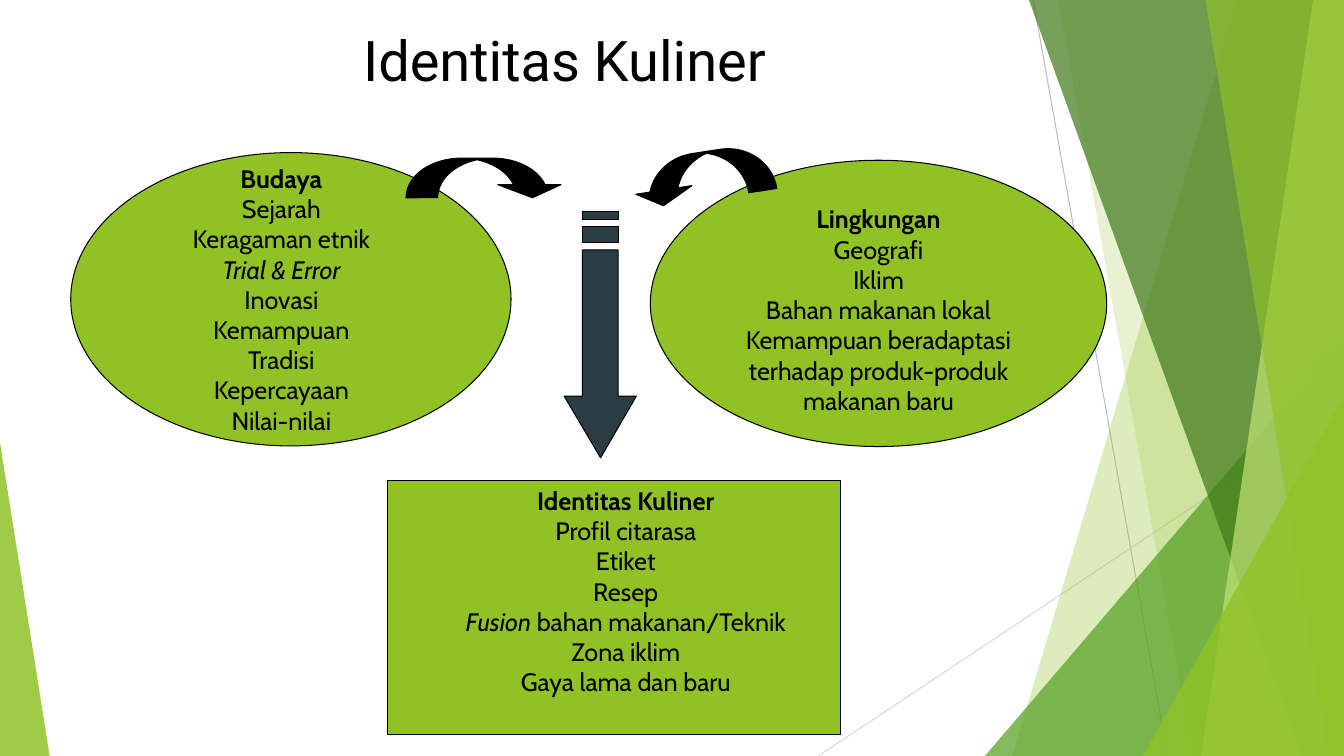
from lxml.etree import SubElement
from pptx import Presentation
from pptx.dml.color import RGBColor
from pptx.enum.shapes import MSO_CONNECTOR, MSO_SHAPE
from pptx.enum.text import PP_ALIGN
from pptx.oxml.ns import qn
from pptx.util import Pt

WIDTH, HEIGHT = 960, 540
BLACK = RGBColor(0x00, 0x00, 0x00)
LIME = RGBColor(0x90, 0xC2, 0x26)
GREEN = RGBColor(0x54, 0xA0, 0x21)
FOREST = RGBColor(0x3F, 0x78, 0x19)
PALE_LIME = RGBColor(0xC0, 0xE4, 0x74)
SLATE = RGBColor(0x2C, 0x3C, 0x43)
GREY = RGBColor(0xBF, 0xBF, 0xBF)
LIGHT_GREY = RGBColor(0xD9, 0xD9, 0xD9)


def style_shape(shape, color, outlined=True, opacity=100):
    """Fill a shape, with an optional black outline and transparency."""
    shape.shadow.inherit = False
    shape.fill.solid()
    shape.fill.fore_color.rgb = color
    if outlined:
        shape.line.color.rgb = BLACK
        shape.line.width = Pt(0.75)
    else:
        shape.line.fill.background()
    if opacity < 100:
        color_element = shape._element.spPr.find(qn("a:solidFill"))[0]
        SubElement(color_element, qn("a:alpha"), val=str(opacity * 1000))


def add_preset(slide, kind, box, color, adjustments=(), rotation=0, **style):
    """Add a preset shape in a box of left, top, width and height."""
    shape = slide.shapes.add_shape(kind, *map(Pt, box))
    for index, value in enumerate(adjustments):
        shape.adjustments[index] = value
    shape.rotation = rotation
    style_shape(shape, color, **style)


def add_outline(slide, contours, color, **style):
    """Add a freeform made of one or more closed contours."""
    points = [[(Pt(x), Pt(y)) for x, y in contour] for contour in contours]
    builder = slide.shapes.build_freeform(*points[0][0])
    builder.add_line_segments(points[0][1:])
    for contour in points[1:]:
        builder.move_to(*contour[0])
        builder.add_line_segments(contour[1:])
    style_shape(builder.convert_to_shape(), color, **style)


def add_band(slide, top_left, bottom_left, color, opacity):
    """Add a translucent band that reaches the right edge of the slide."""
    corners = [(top_left, 0), (WIDTH, 0), (WIDTH, HEIGHT), (bottom_left, HEIGHT)]
    add_outline(slide, [corners], color, outlined=False, opacity=opacity)


def add_corner(slide, left, top, width, apex, color, opacity):
    """Add a translucent triangle that stands on the bottom edge."""
    add_preset(slide, MSO_SHAPE.ISOSCELES_TRIANGLE, (left, top, width, HEIGHT - top),
               color, [apex], outlined=False, opacity=opacity)


def add_line(slide, ends, color):
    """Add a thin straight line between two points."""
    line = slide.shapes.add_connector(MSO_CONNECTOR.STRAIGHT, *map(Pt, ends))
    line.line.color.rgb = color
    line.line.width = Pt(0.75)
    SubElement(line._element.spPr, qn("a:effectLst"))


def add_text(slide, box, lines, size=18, font_name="Cabin", bold_heading=True):
    """Add centred lines, with italics between asterisks."""
    frame = slide.shapes.add_textbox(*map(Pt, box)).text_frame
    frame.word_wrap = True
    for index, line in enumerate(lines):
        paragraph = frame.paragraphs[0] if index == 0 else frame.add_paragraph()
        paragraph.alignment = PP_ALIGN.CENTER
        paragraph.font.name = font_name
        paragraph.font.size = Pt(size)
        paragraph.font.color.rgb = BLACK
        paragraph.font.bold = bold_heading and index == 0
        for position, text in enumerate(line.split("*")):
            if text:
                run = paragraph.add_run()
                run.text = text
                if position % 2:
                    run.font.italic = True


def add_background(slide):
    """Draw the faceted green decoration."""
    add_line(slide, (738, 0, 834, HEIGHT), GREY)
    add_line(slide, (WIDTH, 290, 584.5, HEIGHT), LIGHT_GREY)
    add_band(slide, 884, 723, LIME, 30)
    add_band(slide, 756, 852, LIME, 20)
    add_corner(slide, 703.5, 240, 256.5, 1, GREEN, 72)
    add_band(slide, 735, 930, FOREST, 70)
    add_band(slide, 938, 858, PALE_LIME, 70)
    add_band(slide, 861, 949, LIME, 65)
    add_corner(slide, 816.5, 283, 143.5, 1, LIME, 80)
    add_corner(slide, 0, 316, 35.5, 0, LIME, 85)


def add_striped_arrow(slide):
    """Draw the downward arrow with two stripes above its shaft."""
    left, right, tip = 416, 441.5, 429
    arrow = [(right, 283), (right, 178.5), (left, 178.5), (left, 283),
             (403, 283), (tip, 327), (454.5, 283)]
    stripes = [[(left, top), (right, top), (right, bottom), (left, bottom)]
               for top, bottom in ((162, 173.5), (151, 157))]
    add_outline(slide, [arrow, *stripes], SLATE)


def main():
    """Build the slide and save it."""
    presentation = Presentation()
    presentation.slide_width, presentation.slide_height = Pt(WIDTH), Pt(HEIGHT)
    slide = presentation.slides.add_slide(presentation.slide_layouts[6])
    add_background(slide)
    add_text(slide, (50.5, 14.5, 705.5, 90), ["Identitas Kuliner"],
             40, "Roboto", bold_heading=False)
    add_preset(slide, MSO_SHAPE.OVAL, (50.5, 109, 314.5, 209.5), LIME)
    add_preset(slide, MSO_SHAPE.OVAL, (464.5, 114.5, 326, 204.5), LIME)
    add_preset(slide, MSO_SHAPE.RECTANGLE, (277, 343.5, 323.5, 181.5), LIME)
    add_preset(slide, MSO_SHAPE.CURVED_DOWN_ARROW, (290, 113, 113, 28.3),
               BLACK, (0.8, 1.6, 0.33))
    add_preset(slide, MSO_SHAPE.CURVED_UP_ARROW, (450.7, 108.7, 102.2, 33.8),
               BLACK, (0.6, 1.2, 0.33), rotation=171.3)
    add_striped_arrow(slide)
    add_text(slide, (507, 142, 241, 160), [
        "Lingkungan", "Geografi", "Iklim", "Bahan makanan lokal",
        "Kemampuan beradaptasi terhadap produk-produk makanan baru"])
    add_text(slide, (111, 113, 180, 201.5), [
        "Budaya", "Sejarah", "Keragaman etnik", "*Trial & Error*", "Inovasi",
        "Kemampuan", "Tradisi", "Kepercayaan", "Nilai-nilai"])
    add_text(slide, (267, 343, 360, 160), [
        "Identitas Kuliner", "Profil citarasa", "Etiket", "Resep",
        "*Fusion *bahan makanan/Teknik", "Zona iklim", "Gaya lama dan baru"])
    presentation.save("out.pptx")


if __name__ == "__main__":
    main()
